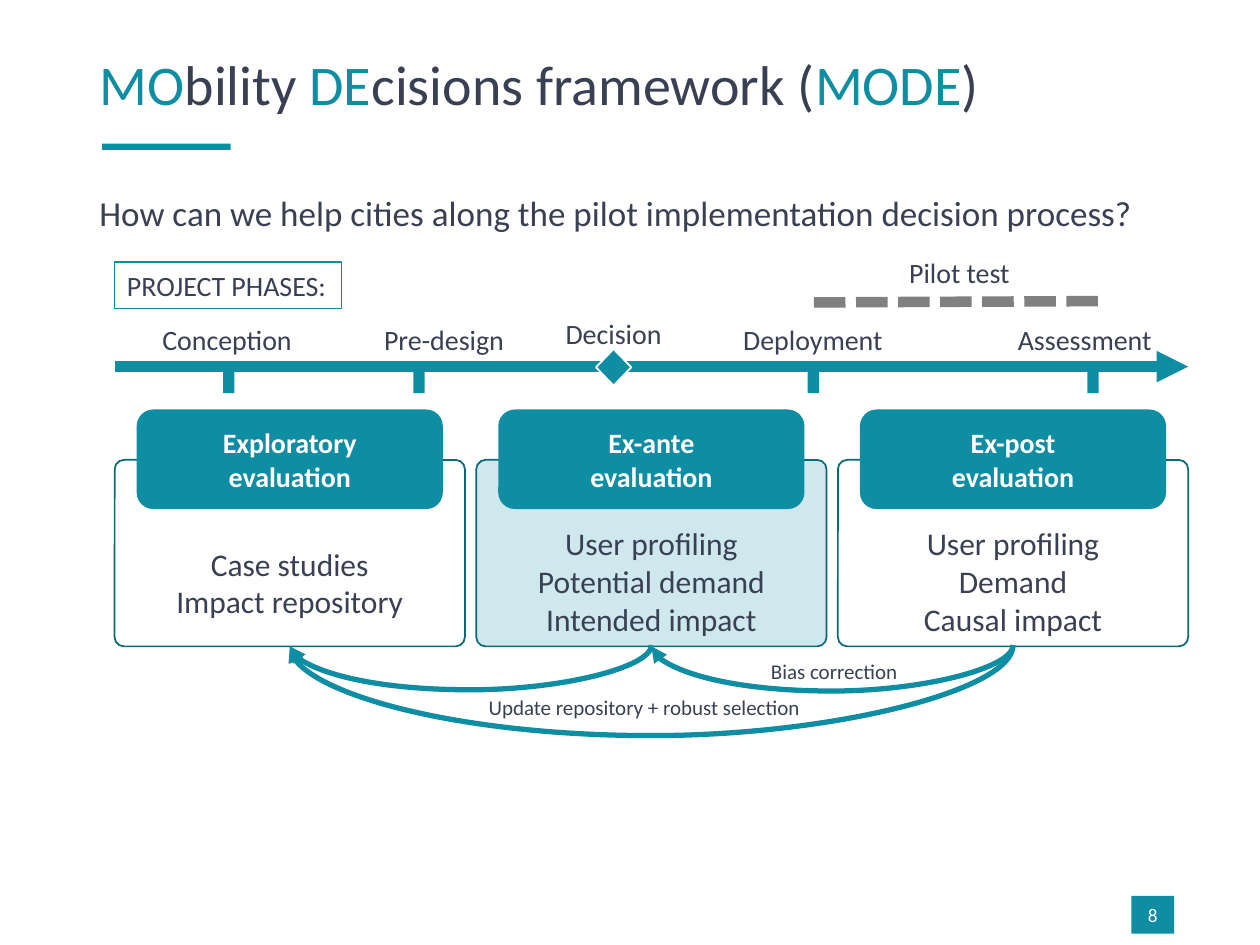
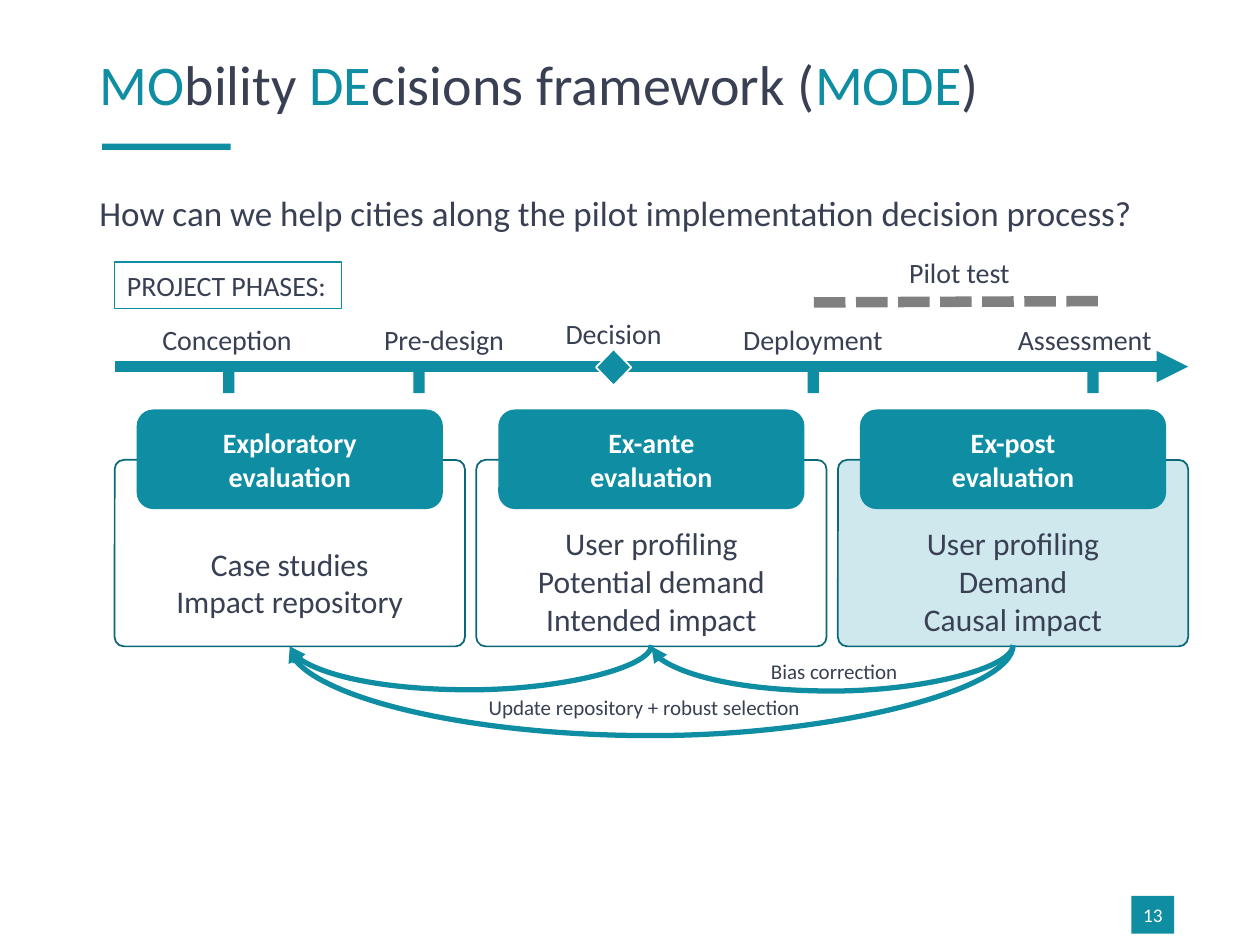
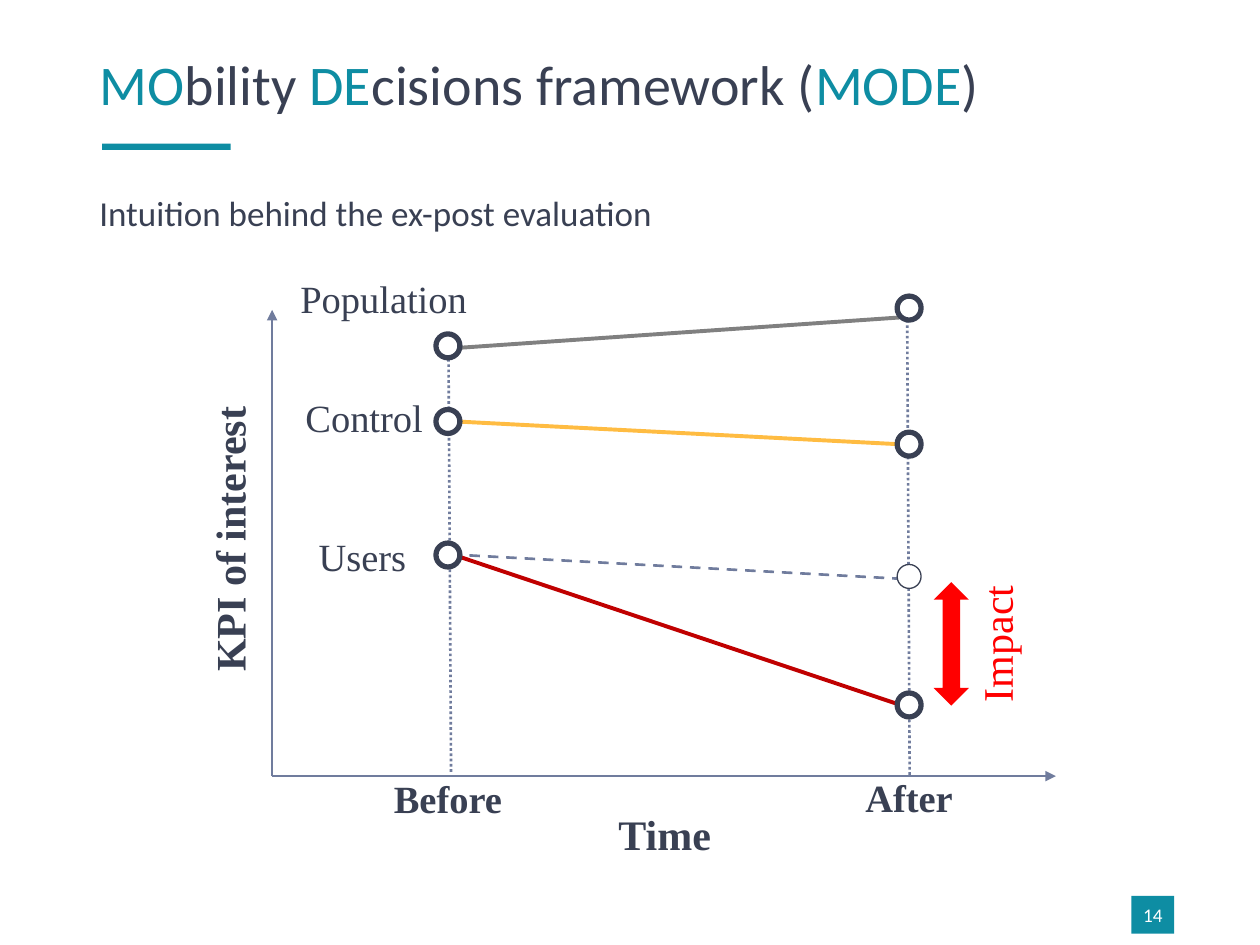
import collections

import lxml.etree
import pptx
import pptx.dml.color
import pptx.enum.dml
import pptx.enum.shapes
import pptx.enum.text
import pptx.oxml.ns
import pptx.util

SHAPE = pptx.enum.shapes.MSO_SHAPE
CONNECTOR = pptx.enum.shapes.MSO_CONNECTOR
ALIGN = pptx.enum.text.PP_ALIGN
ANCHOR = pptx.enum.text.MSO_ANCHOR
DASH = pptx.enum.dml.MSO_LINE

COLUMNS, ROWS = 100, 75
TEAL, DARK_TEAL, PALE_TEAL = "0E8DA3", "0A6879", "CEE8ED"
INK, SLATE, GREY, WHITE = "394053", "707C9D", "808080", "FFFFFF"
AMBER, CRIMSON, RED = "FFBC42", "C00000", "FF0000"
SANS, SERIF = "Calibri", "Times New Roman"

TITLE_SPANS = [("MO", TEAL), ("bility ", INK), ("DE", TEAL),
               ("cisions framework (", INK), ("MODE", TEAL), (")", INK)]
PHASES = [("Conception", 2.8, 12.4, 8.6), ("Pre-design", 20.4, 11.6, 23.7),
          ("Deployment", 48.9, 13.2, 55), ("Assessment", 70.7, 12.8, 77.2)]
EVALUATIONS = [
    ("Exploratory", ["Case studies", "Impact repository"], 1.85),
    ("Ex-ante", ["User profiling", "Potential demand", "Intended impact"], 0.5),
    ("Ex-post", ["User profiling", "Demand", "Causal impact"], 0.5),
]

Box = collections.namedtuple("Box", "left top width height")


def grid(cells):
    return pptx.util.Inches(cells / 10)


def inside(box, left, top, width, height):
    return Box(box.left + left, box.top + top, width, height)


def rgb(color):
    return pptx.dml.color.RGBColor.from_string(color)


def format_span(span, size, color, font=SANS, bold=False):
    span.font.name = font
    span.font.size = pptx.util.Pt(size)
    span.font.bold = bold
    span.font.color.rgb = rgb(color)


def write(shape, lines, size, color=INK, font=SANS, bold=False, align=ALIGN.CENTER,
          anchor=ANCHOR.MIDDLE, wrap=True):
    frame = shape.text_frame
    frame.text = "\n".join(lines)
    frame.word_wrap = wrap
    frame.vertical_anchor = anchor
    for para in frame.paragraphs:
        para.alignment = align
        for span in para.runs:
            format_span(span, size, color, font, bold)
    return frame


def clear_margins(frame):
    frame.margin_left = frame.margin_right = 0
    frame.margin_top = frame.margin_bottom = 0


def add_shape(page, kind, box, fill=None, line=None, weight=1):
    shape = page.shapes.add_shape(kind, *map(grid, box))
    shape.shadow.inherit = False
    if fill:
        shape.fill.solid()
        shape.fill.fore_color.rgb = rgb(fill)
    else:
        shape.fill.background()
    if line:
        shape.line.color.rgb = rgb(line)
        shape.line.width = pptx.util.Pt(weight)
    else:
        shape.line.fill.background()
    return shape


def add_label(page, box, text, size, **style):
    label = page.shapes.add_textbox(*map(grid, box))
    style = {"align": ALIGN.LEFT, "anchor": ANCHOR.TOP, **style}
    return write(label, [text], size, **style)


def add_line(page, box, ends, color, weight, dash=None, arrow=False, kind=CONNECTOR.STRAIGHT):
    left, top, right, bottom = ends
    line = page.shapes.add_connector(kind, grid(box.left + left), grid(box.top + top),
                                     grid(box.left + right), grid(box.top + bottom))
    line.line.color.rgb = rgb(color)
    line.line.width = pptx.util.Pt(weight)
    if dash:
        line.line.dash_style = dash
    properties = line._element.spPr
    qn = pptx.oxml.ns.qn
    if arrow:
        lxml.etree.SubElement(properties.find(qn("a:ln")), qn("a:tailEnd"), type="triangle")
    lxml.etree.SubElement(properties, qn("a:effectLst"))
    return line


def add_arc(page, box, start, end, drop):
    depth, reach, middle = 0.1, start - end, (start + end) / 2
    ends = (middle - depth / 2, (depth - reach) / 2, middle + depth / 2, (depth + reach) / 2)
    arc = add_line(page, box, ends, TEAL, 3, arrow=True, kind=CONNECTOR.CURVE)
    properties = arc._element.spPr
    qn = pptx.oxml.ns.qn
    properties.find(qn("a:xfrm")).set("rot", "5400000")
    geometry = properties.find(qn("a:prstGeom"))
    guides = geometry.find(qn("a:avLst"))
    if guides is None:
        guides = lxml.etree.SubElement(geometry, qn("a:avLst"))
    lxml.etree.SubElement(guides, qn("a:gd"), name="adj1",
                          fmla=f"val {round(drop / depth * 100000)}")


def add_page(deck, number, subtitle):
    page = deck.slides.add_slide(deck.slide_layouts[5])
    badge = add_shape(page, SHAPE.RECTANGLE, Box(89.8, 71.1, 3.4, 3), TEAL)
    clear_margins(write(badge, [str(number)], 11, WHITE))
    add_shape(page, SHAPE.RECTANGLE, Box(8.1, 11.4, 10.2, 0.5), TEAL)

    title = page.shapes.title
    title.left, title.top, title.width, title.height = map(grid, Box(6.9, 4, 86.2, 6.9))
    title.text_frame.vertical_anchor = ANCHOR.TOP
    para = title.text_frame.paragraphs[0]
    para.alignment = ALIGN.LEFT
    para.line_spacing = 0.9
    for text, color in TITLE_SPANS:
        span = para.add_run()
        span.text = text
        format_span(span, 32, color)

    frame = add_label(page, Box(6.9, 14.2, 86.2, 6.1), subtitle, 20)
    frame.paragraphs[0].line_spacing = 1.14
    return page


def draw_timeline(page, box):
    caption = add_shape(page, SHAPE.RECTANGLE, inside(box, 0, 0.3, 18, 3.7), line=TEAL, weight=0.75)
    write(caption, ["PROJECT PHASES:"], 16, align=ALIGN.LEFT, anchor=ANCHOR.TOP, wrap=False)
    add_line(page, box, (0, 8.6, box.width, 8.6), TEAL, 6, arrow=True)
    for name, left, width, tick in PHASES:
        add_label(page, inside(box, left, 4.6, width, 3.7), name, 16, wrap=False)
        add_shape(page, SHAPE.RECTANGLE, inside(box, tick, 8.3, 0.9, 2.4), TEAL)
    add_shape(page, SHAPE.DIAMOND, inside(box, 38.2, 7.2, 2.8, 2.9), TEAL, WHITE)
    add_label(page, inside(box, 34.8, 4.1, 9.7, 3.7), "Decision", 16, wrap=False)
    pilot = add_shape(page, SHAPE.ROUNDED_RECTANGLE, inside(box, 55.5, 0, 23.1, 2.2))
    write(pilot, ["Pilot test"], 16)
    add_line(page, box, (55.5, 3.5, 78.1, 3.4), GREY, 6, DASH.SQUARE_DOT)


def draw_evaluations(page, box, highlight):
    gap, inset, head = 0.9, 1.75, 7.9
    width = (box.width - 2 * gap) / 3
    for index, (name, topics, floor) in enumerate(EVALUATIONS):
        left = index * (width + gap)
        card = add_shape(page, SHAPE.ROUNDED_RECTANGLE, inside(box, left, 4, width, box.height - 4),
                         PALE_TEAL if name == highlight else None, DARK_TEAL)
        card.adjustments[0] = 0.05
        write(card, topics, 18, anchor=ANCHOR.BOTTOM).margin_bottom = grid(floor)
        header = add_shape(page, SHAPE.ROUNDED_RECTANGLE,
                           inside(box, left + inset, 0, width - 2 * inset, head), TEAL)
        write(header, [name, "evaluation"], 16, WHITE, bold=True)


def draw_feedback(page, box):
    first, second, third = (box.width * share / 6 for share in (1, 3, 5))
    first, third = first - 0.3, third + 0.3
    add_arc(page, box, third, second, 3.7)
    add_arc(page, box, third, first, 7.3)
    add_arc(page, box, second, first, 3.6)
    add_label(page, inside(box, 51.1, 0.6, 12.6, 3), "Bias correction", 12, wrap=False)
    add_label(page, inside(box, 28.7, 3.4, 28.7, 3), "Update repository + robust selection", 12)


def add_framework_page(deck, number, highlight):
    page = add_page(deck, number,
                    "How can we help cities along the pilot implementation decision process?")
    draw_evaluations(page, Box(9.1, 32.5, 85.2, 18.8), highlight)
    draw_timeline(page, Box(9.1, 20.5, 85.2, 10.7))
    draw_feedback(page, Box(9.1, 51.2, 85.2, 7.3))


def draw_impact_plot(page, box):
    before, after, marker = 30.55, 67.15, 1.9
    lines = [
        ((30.6, 8.5, 30.8, 41.4), SLATE, 1.5, DASH.ROUND_DOT),
        ((67, 5.4, 67.2, 41.7), SLATE, 1.5, DASH.ROUND_DOT),
        ((31.2, 24.1, 67.2, 36.2), CRIMSON, 2.25, None),
        ((30.2, 13.4, 67.2, 15.3), AMBER, 2.25, None),
        ((30.8, 24, 67.7, 26), SLATE, 1.5, DASH.DASH),
        ((30.1, 7.7, 66.4, 5.2), GREY, 2.25, None),
    ]
    for ends, color, weight, dash in lines:
        add_line(page, box, ends, color, weight, dash)
    for tip in ((16.6, 4.6), (78.8, 41.6)):
        add_line(page, box, (16.6, 41.6, *tip), SLATE, 1.5, arrow=True)

    markers = [(before, 7.45, 3), (before, 13.45, 3), (before, 24.05, 3),
               (after, 4.45, 3), (after, 15.25, 3), (after, 25.75, 0.75), (after, 35.95, 3)]
    for x, y, weight in markers:
        spot = inside(box, x - marker / 2, y - marker / 2, marker, marker)
        add_shape(page, SHAPE.OVAL, spot, WHITE, INK, weight)

    impact = add_shape(page, SHAPE.LEFT_RIGHT_ARROW, inside(box, 65.6, 29.7, 9.8, 2.8), RED)
    impact.rotation = 90

    labels = [
        ("Population", (18.1, 1.8, 14.7, 3.3), 22, INK, False, 0),
        ("Control", (17.7, 11.3, 12.4, 3.7), 22, INK, False, 0),
        ("Users ", (17.8, 22.3, 12.7, 3.7), 22, INK, False, 0),
        ("Before", (21.3, 41.5, 18.5, 3.7), 22, INK, True, 0),
        ("After", (57.9, 41.4, 18.5, 3.7), 22, INK, True, 0),
        ("Time", (38.5, 44.2, 18.5, 3.6), 24, INK, True, 0),
        ("KPI of interest", (0.9, 20.8, 24.5, 4), 24, INK, True, 270),
        ("Impact", (67.8, 29.3, 12.1, 3.6), 24, RED, False, 270),
    ]
    for text, place, size, color, bold, turn in labels:
        label = page.shapes.add_textbox(*map(grid, inside(box, *place)))
        label.rotation = turn
        clear_margins(write(label, [text], size, color, SERIF, bold, anchor=ANCHOR.TOP))


def main():
    deck = pptx.Presentation()
    deck.slide_width, deck.slide_height = grid(COLUMNS), grid(ROWS)
    add_framework_page(deck, 8, "Ex-ante")
    add_framework_page(deck, 13, "Ex-post")
    draw_impact_plot(add_page(deck, 14, "Intuition behind the ex-post evaluation"),
                     Box(5, 20, 85, 48))
    deck.save("out.pptx")


if __name__ == "__main__":
    main()
